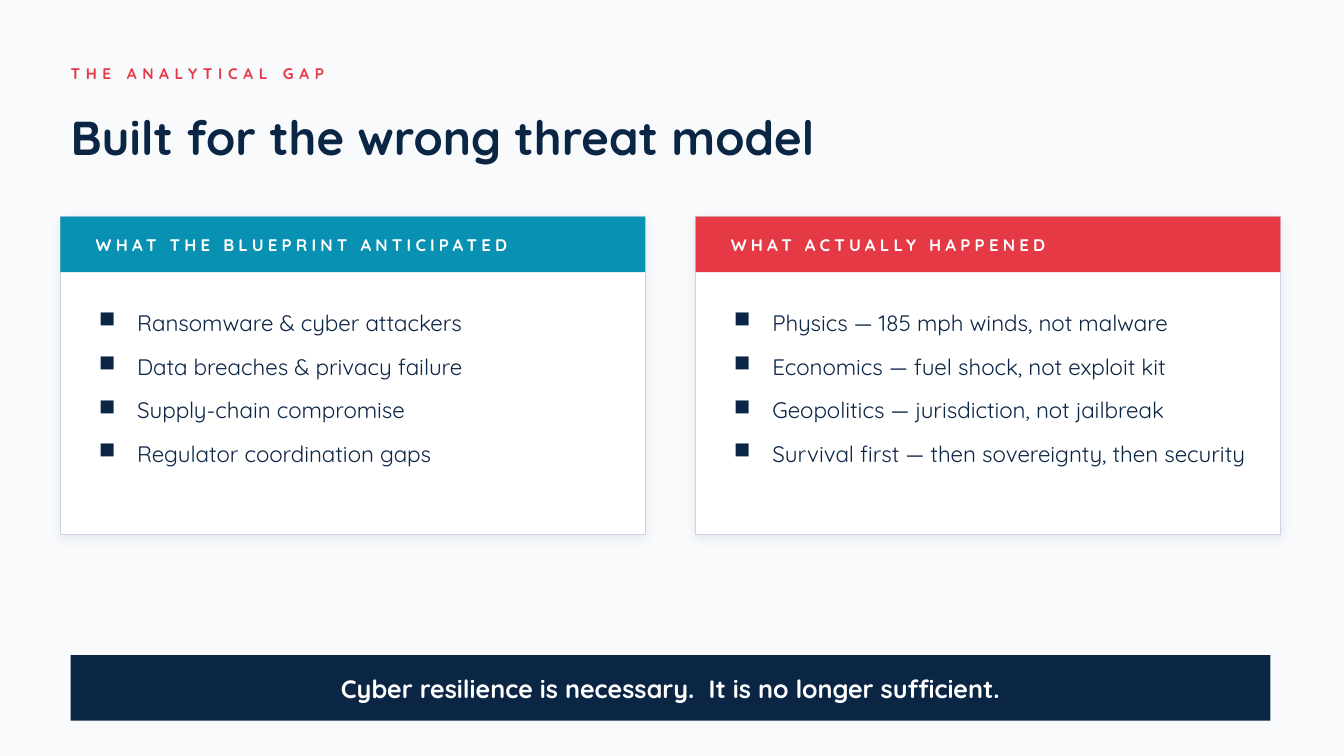
from lxml.etree import SubElement
from pptx import Presentation
from pptx.dml.color import RGBColor
from pptx.enum.shapes import MSO_SHAPE
from pptx.enum.text import MSO_ANCHOR, MSO_AUTO_SIZE, PP_ALIGN
from pptx.oxml.ns import qn
from pptx.util import Inches, Pt

NAVY, RED, TEAL, WHITE = "0B2545", "E63946", "0891B2", "FFFFFF"
BORDER, BACKGROUND = "CBD5E1", "F8FAFC"


def color(hex_code):
    return RGBColor.from_string(hex_code)


class SlideBuilder:
    font_name = "Quicksand"

    def __init__(self, slide):
        self.slide = slide
        slide.background.fill.solid()
        slide.background.fill.fore_color.rgb = color(BACKGROUND)

    def set_text(self, holder, lines, size, ink, bold=True, spacing=0, align=PP_ALIGN.LEFT):
        frame = holder.text_frame
        frame.text = "\n".join(lines)
        frame.word_wrap = True
        frame.auto_size = MSO_AUTO_SIZE.NONE
        frame.vertical_anchor = MSO_ANCHOR.MIDDLE
        frame.margin_left = frame.margin_right = 0
        frame.margin_top = frame.margin_bottom = 0
        for paragraph in frame.paragraphs:
            paragraph.alignment = align
            for run in paragraph.runs:
                run.font.name = self.font_name
                run.font.size = Pt(size)
                run.font.bold = bold
                run.font.color.rgb = color(ink)
                if spacing:
                    run.font._element.set("spc", str(spacing * 100))
        return frame

    def title(self, text, left, top, width, height):
        heading = self.slide.shapes.title
        heading.left, heading.top = Inches(left), Inches(top)
        heading.width, heading.height = Inches(width), Inches(height)
        self.set_text(heading, [text], 34, NAVY)

    def text(self, lines, left, top, width, height, size, ink, **style):
        box = self.slide.shapes.add_textbox(
            Inches(left), Inches(top), Inches(width), Inches(height))
        return self.set_text(box, lines, size, ink, **style)

    def bullets(self, lines, left, top, width, height):
        frame = self.text(lines, left, top, width, height, 16, NAVY, bold=False)
        indent = Inches(0.38)
        for paragraph in frame.paragraphs:
            paragraph.space_after = Pt(12)
            properties = paragraph._p.get_or_add_pPr()
            properties.set("marL", str(indent))
            properties.set("indent", str(-indent))
            SubElement(properties, qn("a:buChar"), char="■")

    def rectangle(self, left, top, width, height, fill, border=None):
        block = self.slide.shapes.add_shape(
            MSO_SHAPE.RECTANGLE,
            Inches(left), Inches(top), Inches(width), Inches(height))
        block.shadow.inherit = False
        block.fill.solid()
        block.fill.fore_color.rgb = color(fill)
        if border:
            block.line.color.rgb = color(border)
            block.line.width = Pt(0.75)
        else:
            block.line.fill.background()
        return block

    def soft_shadow(self, block):
        effects = block._element.spPr.find(qn("a:effectLst"))
        shadow = SubElement(effects, qn("a:outerShdw"), blurRad=str(Pt(8)),
                            dist=str(Pt(2)), dir="5400000", algn="ctr", rotWithShape="0")
        tint = SubElement(shadow, qn("a:srgbClr"), val=NAVY)
        SubElement(tint, qn("a:alpha"), val="8000")

    def card(self, left, heading, accent, points, points_width):
        top, width = 2.15, 5.8
        self.soft_shadow(self.rectangle(left, top, width, 3.15, WHITE, BORDER))
        self.rectangle(left, top, width, 0.55, accent)
        self.text([heading], left + 0.35, top + 0.08, 5.1, 0.4, 12, WHITE, spacing=3)
        self.bullets(points, left + 0.38, top + 0.25, points_width, 2.9)


def main():
    presentation = Presentation()
    presentation.slide_width = Inches(13.33)
    presentation.slide_height = Inches(7.5)
    builder = SlideBuilder(presentation.slides.add_slide(presentation.slide_layouts[5]))

    # Heading
    builder.text(["THE ANALYTICAL GAP"], 0.7, 0.55, 12, 0.35, 11, RED, spacing=4)
    builder.title("Built for the wrong threat model", 0.7, 0.95, 12, 0.8)

    # Comparison cards
    cards = [
        ("WHAT THE BLUEPRINT ANTICIPATED", TEAL, [
            "Ransomware & cyber attackers",
            "Data breaches & privacy failure",
            "Supply-chain compromise",
            "Regulator coordination gaps",
        ], 4.8),
        ("WHAT ACTUALLY HAPPENED", RED, [
            "Physics — 185 mph winds, not malware",
            "Economics — fuel shock, not exploit kit",
            "Geopolitics — jurisdiction, not jailbreak",
            "Survival first — then sovereignty, then security",
        ], 5.43),
    ]
    for column, (heading, accent, points, points_width) in enumerate(cards):
        builder.card(0.6 + 6.3 * column, heading, accent, points, points_width)

    # Conclusion banner
    banner = (0.7, 6.5, 11.9, 0.65)
    builder.rectangle(*banner, NAVY)
    builder.text(["Cyber resilience is necessary.  It is no longer sufficient."],
                 *banner, 18, WHITE, align=PP_ALIGN.CENTER)

    presentation.save("out.pptx")


if __name__ == "__main__":
    main()
